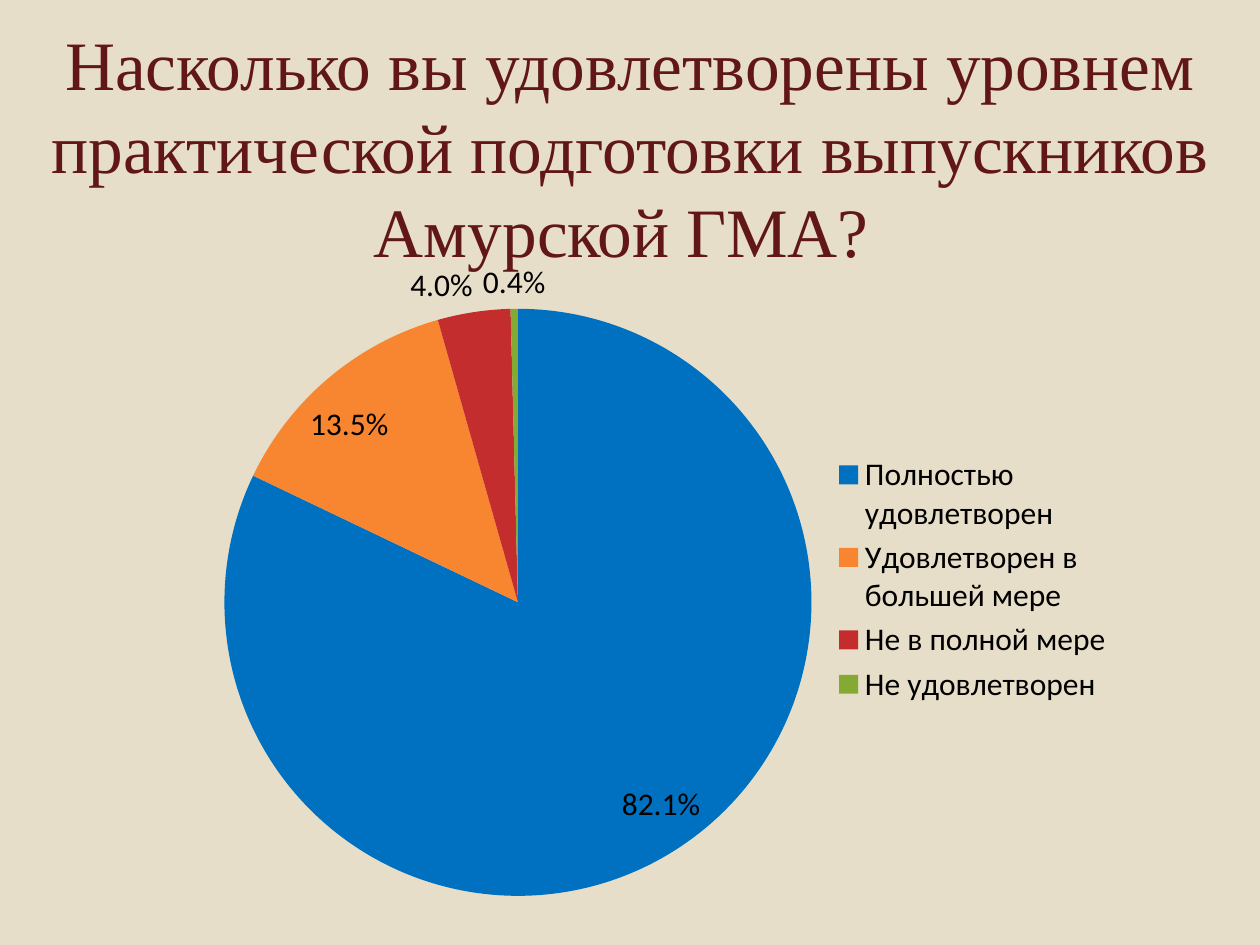
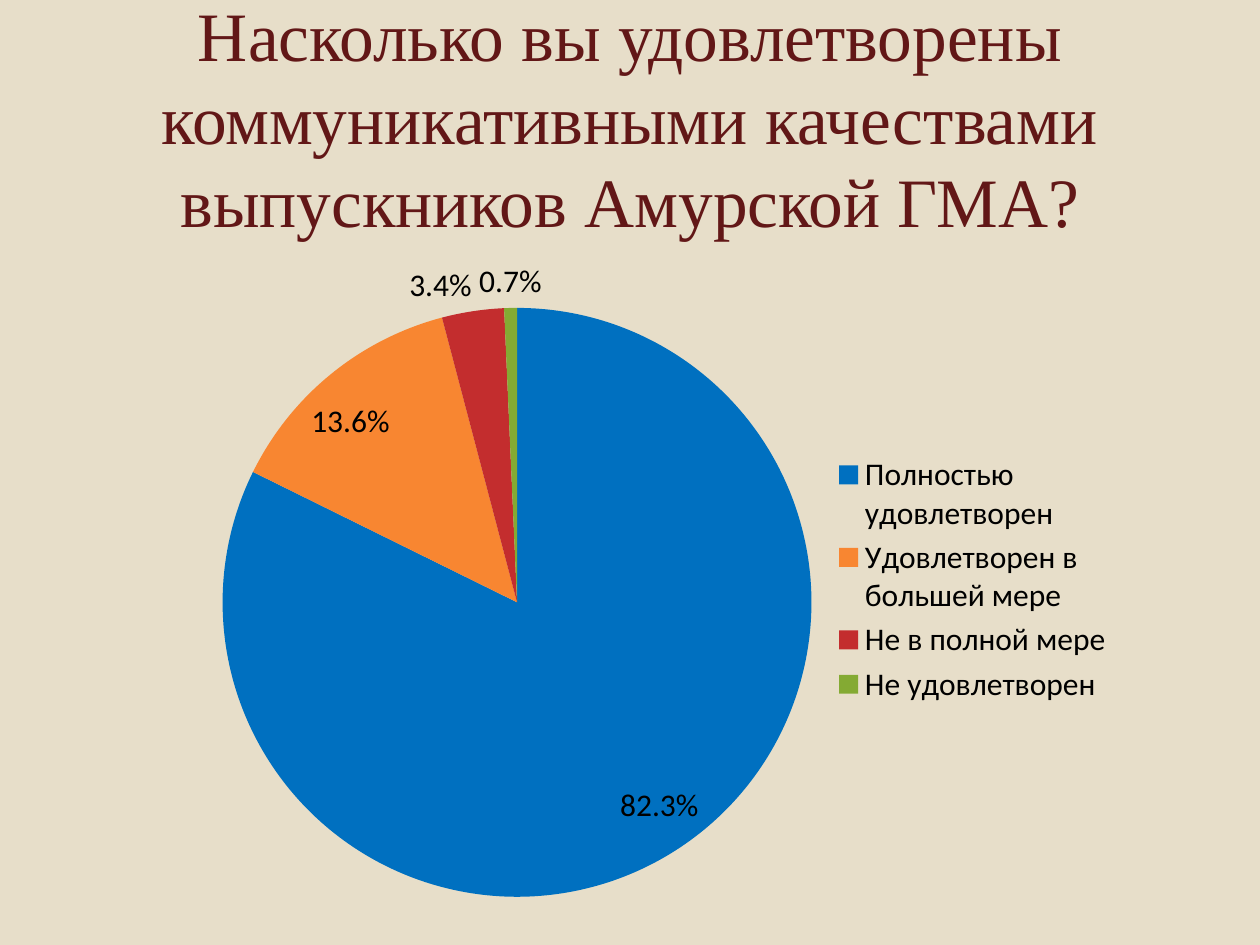
"""Build two survey slides, each with a question and a pie chart of the answers."""
import dataclasses

import pptx
import pptx.chart.data
import pptx.dml.color
import pptx.enum.chart
import pptx.enum.text
import pptx.slide
import pptx.util

Inches = pptx.util.Inches
COLOURS = {
    "background": "E7DEC9",
    "title": "621717",
    "text": "000000",
}
ANSWERS = {
    "Полностью удовлетворен": "0070C0",
    "Удовлетворен в большей мере": "F88631",
    "Не в полной мере": "C32D2E",
    "Не удовлетворен": "84AA33",
}
TITLE_FONT = "Times New Roman"
CHART_FONT = "Calibri"


@dataclasses.dataclass(frozen=True)
class Survey:
    """Hold one question, its title box and the shares of its answers."""
    question: str
    left: float
    width: float
    height: float
    shares: tuple[float, ...]
    title_in_front: bool


SURVEYS = [
    Survey("Насколько вы удовлетворены уровнем практической подготовки выпускников Амурской ГМА? ",
           0, 10, 1.72, (82.1, 13.5, 4, 0.4), True),
    Survey("Насколько вы удовлетворены коммуникативными качествами выпускников Амурской ГМА?",
           0.5, 9, 1.25, (82.3, 13.6, 3.4, 0.7), False),
]


def rgb(code: str) -> pptx.dml.color.RGBColor:
    """Turn a hex string into a colour."""
    return pptx.dml.color.RGBColor.from_string(code)


def add_title(page: pptx.slide.Slide, survey: Survey) -> None:
    """Write the question at the top of the page."""
    box = page.shapes.add_textbox(Inches(survey.left), Inches(0.3),
                                  Inches(survey.width), Inches(survey.height))
    frame = box.text_frame
    frame.word_wrap = True
    frame.vertical_anchor = pptx.enum.text.MSO_ANCHOR.MIDDLE
    para = frame.paragraphs[0]
    para.alignment = pptx.enum.text.PP_ALIGN.CENTER
    span = para.add_run()
    span.text = survey.question
    span.font.name = TITLE_FONT
    span.font.size = pptx.util.Pt(39.6)
    span.font.color.rgb = rgb(COLOURS["title"])


def add_pie(page: pptx.slide.Slide, survey: Survey) -> None:
    """Draw the shares of the answers as a pie with a legend."""
    data = pptx.chart.data.CategoryChartData()
    data.categories = list(ANSWERS)
    data.add_series("Series 1", survey.shares)
    chart = page.shapes.add_chart(
        pptx.enum.chart.XL_CHART_TYPE.PIE,
        Inches(1.38), Inches(1.94), Inches(7.56), Inches(5.32), data).chart
    chart.has_title = False
    chart.font.name = CHART_FONT
    chart.font.size = pptx.util.Pt(18)
    chart.font.color.rgb = rgb(COLOURS["text"])
    chart.has_legend = True
    chart.legend.position = pptx.enum.chart.XL_LEGEND_POSITION.RIGHT
    chart.legend.include_in_layout = False

    pie = chart.plots[0]
    pie.vary_by_categories = True
    for index, code in enumerate(ANSWERS.values()):
        fill = pie.series[0].points[index].format.fill
        fill.solid()
        fill.fore_color.rgb = rgb(code)
    pie.has_data_labels = True
    labels = pie.data_labels
    labels.show_percentage = True
    labels.show_value = False
    labels.number_format = "0.0%"
    labels.number_format_is_linked = False
    labels.position = pptx.enum.chart.XL_LABEL_POSITION.BEST_FIT


def add_survey(deck, survey: Survey) -> None:
    """Add a page for one survey question."""
    page = deck.slides.add_slide(deck.slide_layouts[6])
    page.background.fill.solid()
    page.background.fill.fore_color.rgb = rgb(COLOURS["background"])
    steps = [add_pie, add_title] if survey.title_in_front else [add_title, add_pie]
    for draw in steps:
        draw(page, survey)


def main() -> None:
    """Build and save the deck."""
    deck = pptx.Presentation()
    deck.slide_width = Inches(10)
    deck.slide_height = Inches(7.5)
    for survey in SURVEYS:
        add_survey(deck, survey)
    deck.save("out.pptx")


if __name__ == "__main__":
    main()
